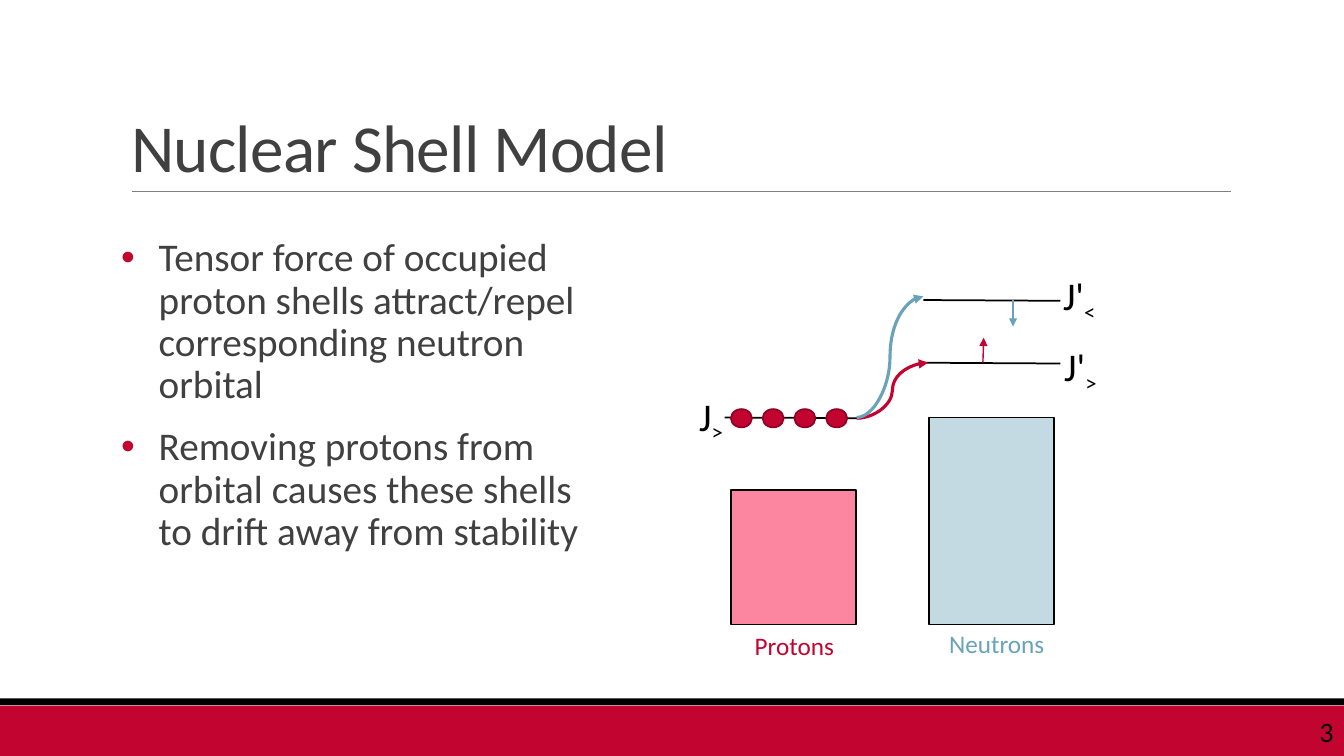
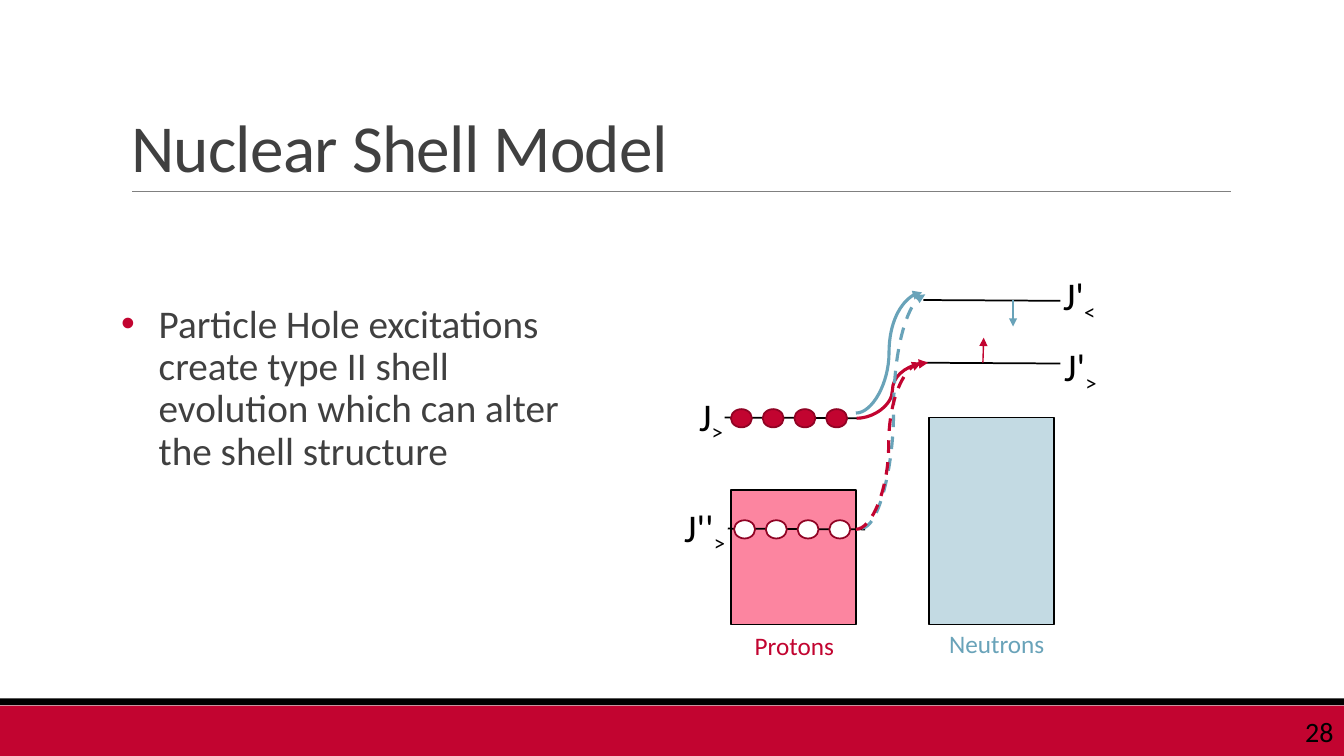
from lxml.etree import SubElement
from pptx import Presentation
from pptx.dml.color import RGBColor
from pptx.enum.dml import MSO_LINE_DASH_STYLE as Dash
from pptx.enum.shapes import MSO_CONNECTOR as Link, MSO_SHAPE as Preset
from pptx.enum.text import MSO_ANCHOR as Anchor, MSO_AUTO_SIZE as AutoSize, PP_ALIGN as Align
from pptx.oxml.ns import qn
from pptx.util import Cm, Pt

FONT = "Calibri"
RED, DARK_RED, PINK = "C20430", "900324", "FC85A0"
BLUE, PALE_BLUE = "69A3B9", "C3DAE3"
BLACK, WHITE, GREY, TEXT = "000000", "FFFFFF", "808080", "404040"
BODY_LEFT, BODY_WIDTH, BODY_BOTTOM = 3.05, 11.86, 16.28
DIAGRAM_LEFT, DIAGRAM_TOP = 17, 6.7


def color(hex_text):
    return RGBColor.from_string(hex_text)


def add_span(para, text, size, ink, **attributes):
    span = para.add_run()
    span.text = text
    span.font.name, span.font.size = FONT, Pt(size)
    span.font.color.rgb = color(ink)
    for name, value in attributes.items():
        span._r.get_or_add_rPr().set(name, str(value))


def add_bullet(para):
    props = para._p.get_or_add_pPr()
    props.set("marL", str(Cm(0.95)))
    props.set("indent", str(-Cm(0.95)))
    tint = SubElement(props, qn("a:buClr"))
    SubElement(tint, qn("a:srgbClr")).set("val", RED)
    SubElement(props, qn("a:buFont")).set("typeface", "Arial")
    SubElement(props, qn("a:buChar")).set("char", "•")


def write(frame, *texts, size=28, ink=BLACK, align=Align.LEFT, anchor=Anchor.TOP,
          wrap=True, line=1.0, before=0, after=0, bullet=False, spacing=0, below=""):
    frame.auto_size, frame.word_wrap = AutoSize.NONE, wrap
    frame.vertical_anchor = anchor
    for index, text in enumerate(texts):
        para = frame.add_paragraph() if index else frame.paragraphs[0]
        para.alignment, para.line_spacing = align, line
        para.space_before, para.space_after = Pt(before if index else 0), Pt(after)
        if bullet:
            add_bullet(para)
        add_span(para, text, size, ink, spc=spacing)
        if below:
            add_span(para, below, size, ink, baseline=-25000)


def add_label(page, left, top, width, height, text, **style):
    box = page.shapes.add_textbox(Cm(left), Cm(top), Cm(width), Cm(height))
    write(box.text_frame, text, **style)


def add_block(page, preset, left, top, width, height, fill, outline=None):
    block = page.shapes.add_shape(preset, Cm(left), Cm(top), Cm(width), Cm(height))
    block.shadow.inherit = False
    block.fill.solid()
    block.fill.fore_color.rgb = color(fill)
    if outline:
        block.line.color.rgb, block.line.width = color(outline), Pt(1.25)
    else:
        block.line.fill.background()
    return block


def add_line(page, start, end, ink=BLACK, weight=1.25, kind=Link.STRAIGHT,
             arrow=False, dashed=False):
    line = page.shapes.add_connector(kind, *(Cm(value) for value in (*start, *end)))
    line.line.color.rgb, line.line.width = color(ink), Pt(weight)
    if dashed:
        line.line.dash_style = Dash.DASH
    if arrow:
        SubElement(line.line._get_or_add_ln(), qn("a:tailEnd")).set("type", "triangle")
    SubElement(line._element.spPr, qn("a:effectLst"))
    return line


def share_decoration(page):
    layout = page.slide_layout
    parts = [
        add_block(page, Preset.RECTANGLE, 0, 17.78, 33.87, 1.27, RED),
        add_block(page, Preset.RECTANGLE, 0, 17.6, 33.87, 0.17, BLACK),
        add_line(page, (3.33, 4.82), (31.01, 4.82), GREY, 0.5),
    ]
    for index, part in enumerate(parts):
        part.element.xpath(".//p:cNvPr")[0].set("id", str(100 + index))
        layout.shapes.element.insert(2 + index, part.element)


def place_layout_title(layout):
    title = layout.placeholders[0]
    title.left, title.top, title.width, title.height = Cm(3.05), Cm(0.79), Cm(27.94), Cm(4.04)


def add_page(deck, number, body_top, *points):
    page = deck.slides.add_slide(deck.slide_layouts[1])
    write(page.shapes.title.text_frame, "Nuclear Shell Model", size=48, ink=TEXT,
          anchor=Anchor.BOTTOM, line=0.85, spacing=-50)
    add_label(page, 30.23, 17.93, 3.63, 1.02, number, size=20, align=Align.RIGHT,
              anchor=Anchor.MIDDLE)
    body = page.placeholders[1]
    body.left, body.top = Cm(BODY_LEFT), Cm(body_top)
    body.width, body.height = Cm(BODY_WIDTH), Cm(BODY_BOTTOM - body_top)
    frame = body.text_frame
    frame.margin_left = frame.margin_right = 0
    write(frame, *points, ink=TEXT, line=0.9, before=12, after=2, bullet=True)
    return page


def add_proton_shell(page, left, top, name, name_width, fill):
    add_line(page, (left, top), (left + 3.46, top + 0.02))
    add_label(page, left + 0.3 - name_width, top - 0.77, name_width, 1.45, name,
              wrap=False, below=">")
    for index in range(4):
        add_block(page, Preset.OVAL, left + 0.16 + 0.8 * index, top - 0.21, 0.53, 0.46,
                  fill, DARK_RED)


def add_neutron_level(page, left, top, name_left, name_top, name_width, sign):
    add_line(page, (left, top), (left + 3.45, top + 0.02))
    add_label(page, name_left, name_top, name_width, 1.45, "J'", wrap=False, below=sign)


def add_diagram(page, left, top, blue_curve, excited=False):
    def at(x, y):
        return left + x, top + y

    def curve(start, end, ink, dashed=False):
        add_line(page, at(*start), at(*end), ink, 2.25, Link.CURVE, True, dashed)

    for name, x, y, fill, ink, name_x, name_y in (
            ("Protons", 1.42, 5.64, PINK, RED, 1.77, 9.05),
            ("Neutrons", 6.42, 3.82, PALE_BLUE, BLUE, 6.67, 9)):
        add_block(page, Preset.RECTANGLE, *at(x, y), 3.15, 9.04 - y, fill, BLACK)
        add_label(page, *at(name_x, name_y), 3.25, 1.02, name, size=18, ink=ink)
    add_neutron_level(page, *at(6.27, 0.86), *at(9.54, 0.01), 1.4, "<")
    add_neutron_level(page, *at(6.27, 2.44), *at(9.57, 1.81), 1.57, ">")
    add_proton_shell(page, *at(1.26, 3.82), "J", 1.19, RED)
    curve((4.59, 3.84), (6.39, 2.44), RED)
    curve(*blue_curve, BLUE)
    add_line(page, at(7.77, 2.44), at(7.79, 1.81), RED, 1, arrow=True)
    add_line(page, at(8.53, 0.87), at(8.53, 1.53), BLUE, arrow=True)
    if excited:
        add_proton_shell(page, *at(1.34, 6.62), "J''", 1.65, WHITE)
        curve((4.72, 6.61), (6.32, 0.72), BLUE, True)
        curve((4.57, 6.64), (6.22, 2.44), RED, True)


def main():
    deck = Presentation()
    deck.slide_width, deck.slide_height = Cm(33.87), Cm(19.05)
    place_layout_title(deck.slide_layouts[1])
    tensor_page = add_page(
        deck, "3", 5.87,
        "Tensor force of occupied proton shells attract/repel corresponding neutron orbital",
        "Removing protons from orbital causes these shells to drift away from stability")
    share_decoration(tensor_page)
    add_diagram(tensor_page, DIAGRAM_LEFT, DIAGRAM_TOP, ((4.59, 3.82), (6.27, 0.77)))
    excitation_page = add_page(
        deck, "28", 7.54,
        "Particle Hole excitations create type II shell evolution which can alter "
        "the shell structure")
    add_diagram(excitation_page, DIAGRAM_LEFT, DIAGRAM_TOP, ((4.57, 3.71), (6.24, 0.67)),
                excited=True)
    deck.save("out.pptx")


if __name__ == "__main__":
    main()
